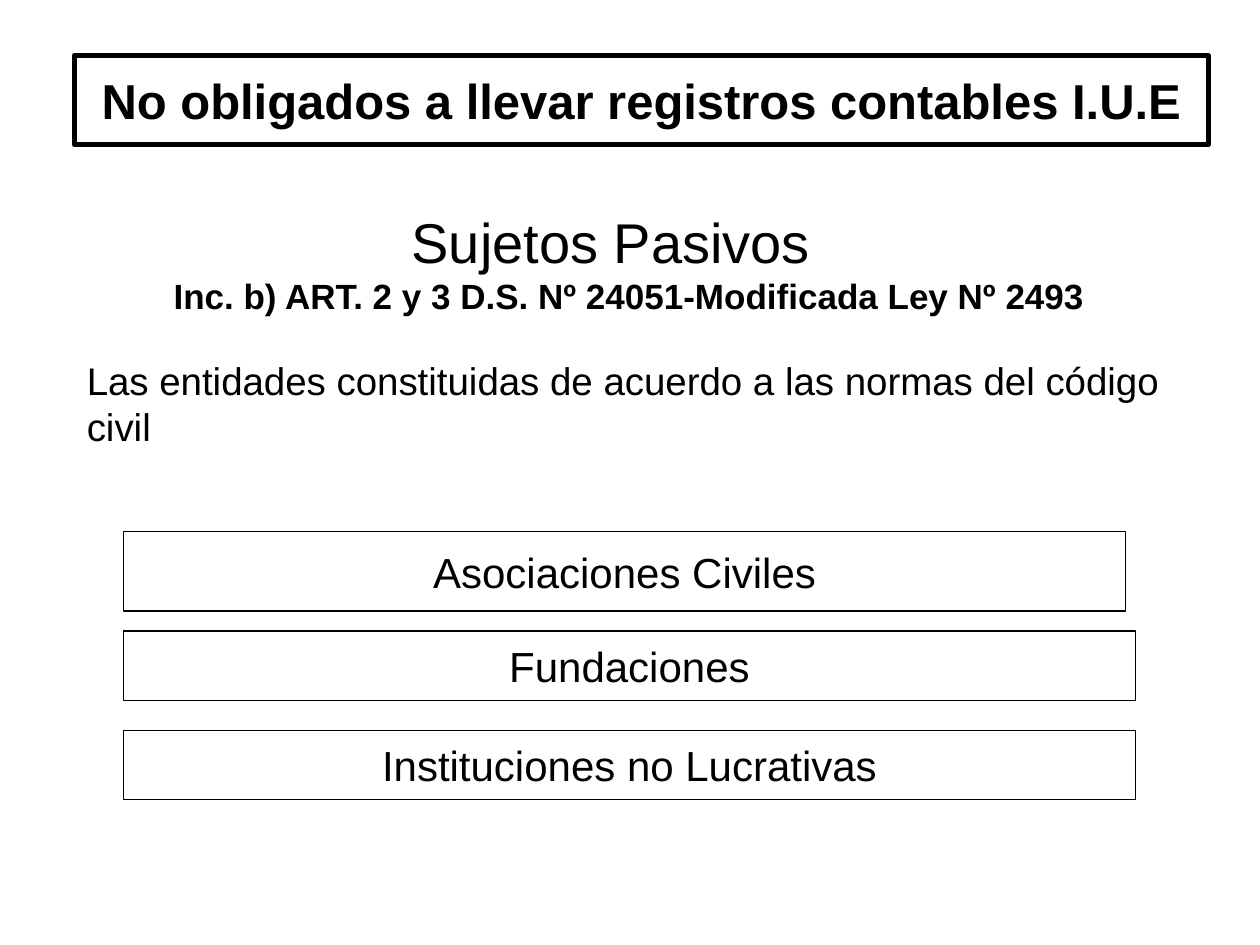
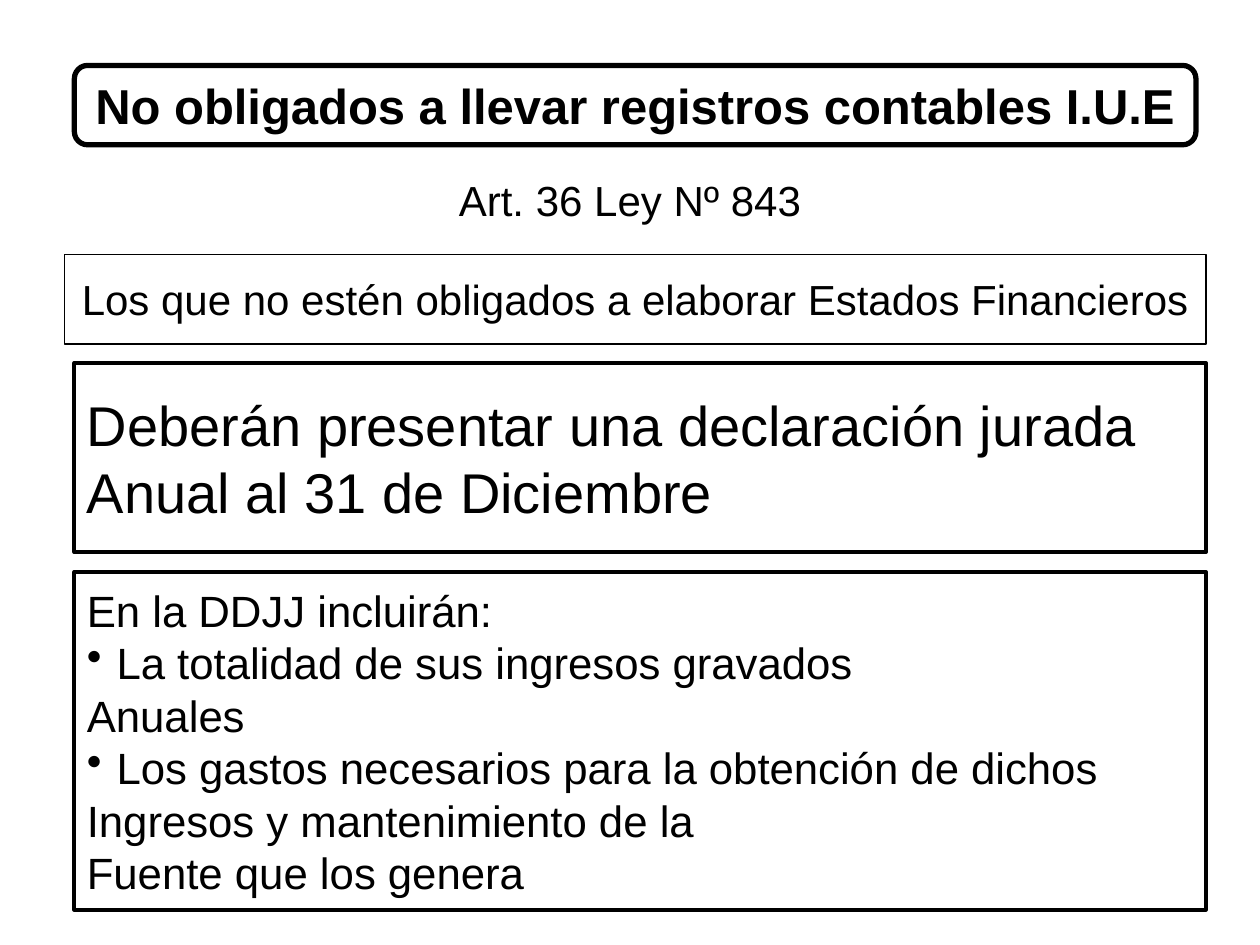
from dataclasses import dataclass

from pptx import Presentation
from pptx import util as u
from pptx.dml.color import RGBColor
from pptx.enum import shapes, text
from pptx.oxml.xmlchemy import OxmlElement


@dataclass(frozen=True)
class Theme:
    font: str = "Arial"
    ink: RGBColor = RGBColor(0, 0, 0)
    # Type sizes
    heading: float = 32
    title: float = 28
    listing: float = 25
    body: float = 24
    note: float = 22
    citation: float = 20
    # Line widths
    thick: float = 3
    medium: float = 2.25
    light: float = 1
    thin: float = 0.75


T = Theme()
RECT = shapes.MSO_SHAPE.RECTANGLE
ROUNDED = shapes.MSO_SHAPE.ROUNDED_RECTANGLE
LEFT = text.PP_ALIGN.LEFT
CENTER = text.PP_ALIGN.CENTER
TITLE = "No obligados a llevar registros contables I.U.E"
MARGIN = 1.5


@dataclass
class Line:
    text: str
    size: float
    bold: bool = False
    indent: float = 0
    before: float = 0
    bullet: bool = False


def write(sp, lines, align):
    """Fill a shape with vertically centred lines."""
    tf = sp.text_frame
    tf.word_wrap = True
    tf.vertical_anchor = text.MSO_ANCHOR.MIDDLE
    for i, line in enumerate(lines):
        p = tf.add_paragraph() if i else tf.paragraphs[0]
        p.text = line.text
        p.alignment = align
        if line.before:
            p.space_before = u.Pt(line.before)
        pPr = p._p.get_or_add_pPr()
        if line.indent:
            pPr.set("marL", str(u.Cm(line.indent)))
        if line.bullet:
            pPr.set("indent", str(-u.Cm(line.indent)))
            bu = OxmlElement("a:buChar")
            bu.set("char", "•")
            pPr.append(bu)
        for r in p.runs:
            r.font.name = T.font
            r.font.size = u.Pt(line.size)
            r.font.bold = line.bold
            r.font.color.rgb = T.ink


def text_block(s, box, lines, align=LEFT):
    sp = s.shapes.add_textbox(*map(u.Cm, box))
    write(sp, lines, align)


def panel(s, box, lines, width, align=CENTER, shape=RECT):
    """Outlined box with text."""
    sp = s.shapes.add_shape(shape, *map(u.Cm, box))
    sp.shadow.inherit = False
    sp.fill.background()
    sp.line.color.rgb = T.ink
    sp.line.width = u.Pt(width)
    write(sp, lines, align)


def title_box(s, box, shape=RECT):
    panel(s, box, [Line(TITLE, T.title, bold=True)], T.thick, shape=shape)


def entity_rows(s, box):
    """Stack of entity types; the first row is taller and narrower."""
    x, y, w, h = box
    pitch, extra = 2, 0.2
    names = ["Asociaciones Civiles", "Fundaciones", "Instituciones no Lucrativas"]
    for i, name in enumerate(names):
        more = 0 if i else extra
        panel(s, (x, y + i * pitch, w - more, h + more),
              [Line(name, T.body)], T.thin)


def taxpayers_slide(s):
    title_box(s, (MARGIN, 1.12, 22.86, 1.8))
    entity_rows(s, (2.49, 10.72, 20.4, 1.4))
    # Who is liable, and under which rule
    text_block(s, (MARGIN, 3.73, 22.61, 5.79), [
        Line("Sujetos Pasivos", T.heading, indent=6.55),
        Line("Inc. b) ART. 2 y 3 D.S. Nº 24051-Modificada Ley Nº 2493",
             T.citation, bold=True, indent=1.75),
        Line("Las entidades constituidas de acuerdo a las normas del código",
             T.note, before=23),
        Line("civil", T.note),
    ])


def declaration_slide(s):
    title_box(s, (MARGIN, 1.32, 22.61, 1.6), ROUNDED)
    # Legal basis and scope
    text_block(s, (MARGIN, 3.33, 22.4, 1.4),
               [Line("Art. 36 Ley Nº 843", T.body)], CENTER)
    panel(s, (1.3, 5.13, 23.01, 1.8),
          [Line("Los que no estén obligados a elaborar Estados Financieros", T.body)],
          T.light)
    # Duty to file
    panel(s, (MARGIN, 7.32, 22.81, 3.81), [
        Line("Deberán presentar una declaración jurada", T.heading),
        Line("Anual al 31 de Diciembre", T.heading),
    ], T.medium, LEFT)
    # Contents of the return
    contents = [
        ("En la DDJJ incluirán:", False),
        ("La totalidad de sus ingresos gravados", True),
        ("Anuales", False),
        ("Los gastos necesarios para la obtención de dichos", True),
        ("Ingresos y mantenimiento de la", False),
        ("Fuente que los genera", False),
    ]
    panel(s, (MARGIN, 11.53, 22.81, 6.81),
          [Line(t, T.listing, indent=0.6 if b else 0, bullet=b) for t, b in contents],
          T.medium, LEFT)


def main():
    prs = Presentation()
    prs.slide_width, prs.slide_height = u.Cm(25.4), u.Cm(19.05)
    for build in (taxpayers_slide, declaration_slide):
        build(prs.slides.add_slide(prs.slide_layouts[6]))
    prs.save("out.pptx")


if __name__ == "__main__":
    main()
